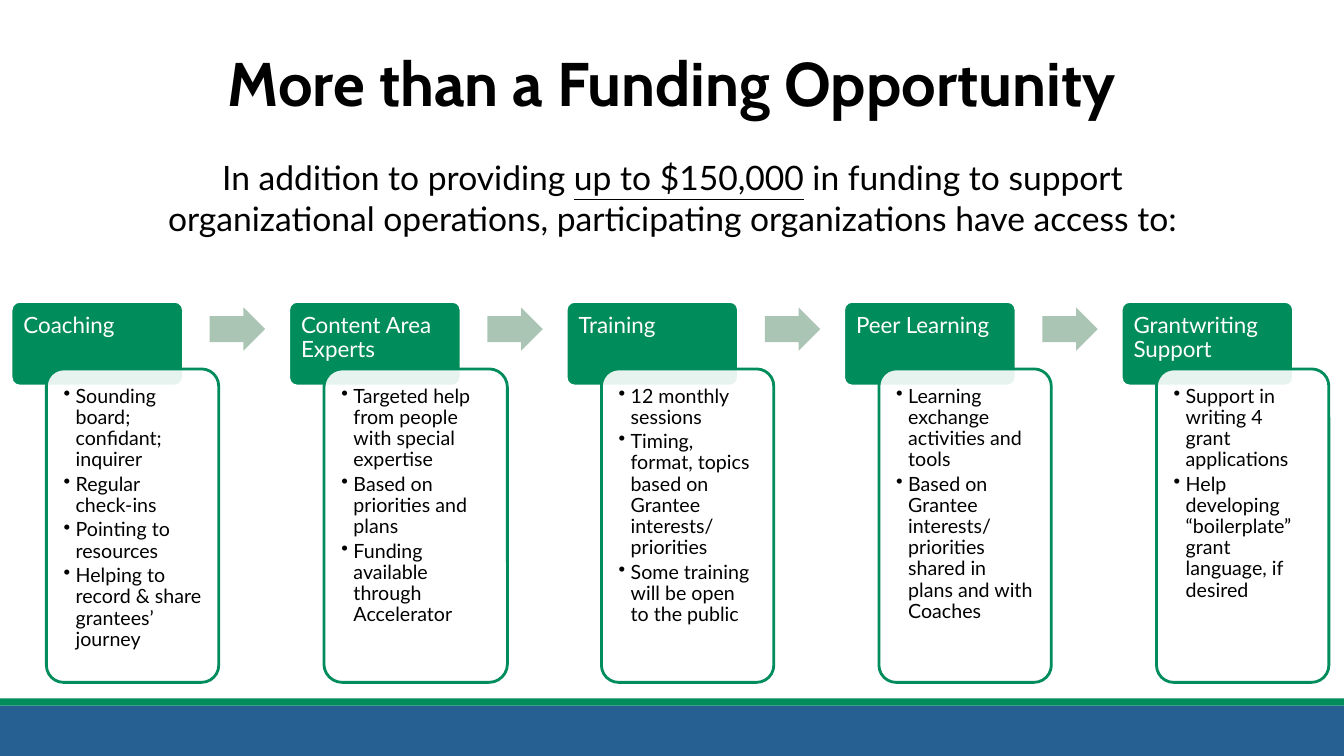
from dataclasses import dataclass

import lxml.etree
import pptx
import pptx.dml.color
import pptx.enum.shapes
import pptx.enum.text
import pptx.oxml.ns
import pptx.shapes.autoshape
import pptx.slide
import pptx.text.text
import pptx.util

Inches = pptx.util.Inches
Pt = pptx.util.Pt
Shapes = pptx.enum.shapes.MSO_SHAPE
Align = pptx.enum.text.PP_ALIGN
Anchor = pptx.enum.text.MSO_ANCHOR

COLORS = {
    "text": "000000",
    "white": "FFFFFF",
    "green": "008C5B",
    "blue": "265F92",
    "arrow": "ABC5B5",
}
HEADING_FONT = "Cabin"
BODY_FONT = "Lato"

SLIDE_WIDTH = 13.33
FIRST_LEFT = 0.11
LAST_LEFT = 11.12
HEADER_TOP = 2.99
HEADER_WIDTH, HEADER_HEIGHT = 1.71, 0.84
CARD_OFFSET, CARD_TOP, CARD_HEIGHT = 0.35, 3.66, 3.11
ARROW_OFFSET, ARROW_TOP = 1.97, 3.05
ARROW_WIDTH, ARROW_HEIGHT = 0.55, 0.43


@dataclass(frozen=True)
class Benefit:
    heading: str
    points: tuple[str, ...]
    card_width: float = 1.71


BENEFITS = (
    Benefit("Coaching", (
        "Sounding board; confidant; inquirer",
        "Regular check-ins",
        "Pointing to resources",
        "Helping to record & share grantees’ journey",
    )),
    Benefit("Content Area Experts", (
        "Targeted help from people with special expertise",
        "Based on priorities and plans",
        "Funding available through Accelerator",
    ), card_width=1.82),
    Benefit("Training", (
        "12 monthly sessions",
        "Timing, format, topics based on Grantee interests/ priorities",
        "Some training will be open to the public",
    )),
    Benefit("Peer Learning", (
        "Learning exchange activities and tools",
        "Based on Grantee interests/ priorities shared in plans and with Coaches",
    )),
    Benefit("Grantwriting Support", (
        "Support in writing 4 grant applications",
        "Help developing “boilerplate” grant language, if desired",
    )),
)


def color(name: str) -> pptx.dml.color.RGBColor:
    return pptx.dml.color.RGBColor.from_string(COLORS[name])


def add_span(para: pptx.text.text._Paragraph, text: str, size: float,
             ink: str = "text", font: str = BODY_FONT,
             bold: bool = False, underline: bool = False) -> None:
    span = para.add_run()
    span.text = text
    span.font.name = font
    span.font.size = Pt(size)
    span.font.bold = bold
    span.font.underline = underline
    span.font.color.rgb = color(ink)


def add_box(page: pptx.slide.Slide, preset: Shapes, left: float, top: float,
            width: float, height: float, fill: str,
            line: str | None = None) -> pptx.shapes.autoshape.Shape:
    box = page.shapes.add_shape(
        preset, Inches(left), Inches(top), Inches(width), Inches(height))
    box.shadow.inherit = False
    box.fill.solid()
    box.fill.fore_color.rgb = color(fill)
    if line:
        box.line.color.rgb = color(line)
        box.line.width = Pt(2)
    else:
        box.line.fill.background()
    return box


def set_text_area(box: pptx.shapes.autoshape.Shape, margin: float,
                  bottom: float) -> pptx.text.text.TextFrame:
    frame = box.text_frame
    frame.word_wrap = True
    frame.vertical_anchor = Anchor.TOP
    frame.margin_left = frame.margin_right = frame.margin_top = Inches(margin)
    frame.margin_bottom = Inches(bottom)
    return frame


def add_bullet(para: pptx.text.text._Paragraph) -> None:
    properties = para._p.get_or_add_pPr()
    properties.set("marL", str(Inches(0.12)))
    properties.set("indent", str(Inches(-0.12)))
    bullet = lxml.etree.SubElement(properties, pptx.oxml.ns.qn("a:buChar"))
    bullet.set("char", "•")


def add_header(page: pptx.slide.Slide, benefit: Benefit, left: float) -> None:
    header = add_box(page, Shapes.ROUNDED_RECTANGLE, left, HEADER_TOP,
                     HEADER_WIDTH, HEADER_HEIGHT, "green", "white")
    header.adjustments[0] = 0.1
    para = set_text_area(header, 0.1, 0.32).paragraphs[0]
    para.alignment = Align.LEFT
    para.line_spacing = 0.9
    add_span(para, benefit.heading, 16, "white")


def add_card(page: pptx.slide.Slide, benefit: Benefit, left: float) -> None:
    card = add_box(page, Shapes.ROUNDED_RECTANGLE, left + CARD_OFFSET, CARD_TOP,
                   benefit.card_width, CARD_HEIGHT, "white", "green")
    card.adjustments[0] = 0.1
    fill = card.fill._xPr.find(pptx.oxml.ns.qn("a:solidFill"))
    alpha = lxml.etree.SubElement(fill[0], pptx.oxml.ns.qn("a:alpha"))
    alpha.set("val", "90000")
    frame = set_text_area(card, 0.12, 0.12)
    for index, point in enumerate(benefit.points):
        para = frame.add_paragraph() if index else frame.paragraphs[0]
        add_bullet(para)
        para.alignment = Align.LEFT
        para.line_spacing = 0.9
        para.space_after = Pt(2.4)
        add_span(para, point, 14)


def add_arrow(page: pptx.slide.Slide, left: float) -> None:
    arrow = add_box(page, Shapes.RIGHT_ARROW, left + ARROW_OFFSET, ARROW_TOP,
                    ARROW_WIDTH, ARROW_HEIGHT, "arrow")
    arrow.adjustments[0] = 0.6
    arrow.adjustments[1] = 0.5


def add_title(page: pptx.slide.Slide) -> None:
    title = page.shapes.title
    title.left, title.top = Inches(0.72), Inches(0.19)
    title.width, title.height = Inches(11.89), Inches(1.25)
    title.text_frame.vertical_anchor = Anchor.MIDDLE
    para = title.text_frame.paragraphs[0]
    para.alignment = Align.CENTER
    add_span(para, "More than a Funding Opportunity", 44,
             font=HEADING_FONT, bold=True)


def add_introduction(page: pptx.slide.Slide) -> None:
    box = page.shapes.add_textbox(
        Inches(1.17), Inches(1.51), Inches(11), Inches(1.25))
    box.text_frame.word_wrap = True
    para = box.text_frame.paragraphs[0]
    para.alignment = Align.CENTER
    add_span(para, "In addition to providing ", 24)
    add_span(para, "up to $150,000", 24, underline=True)
    add_span(para, " in funding to support organizational operations, "
                   "participating organizations have access to:", 24)


def main() -> None:
    deck = pptx.Presentation()
    deck.slide_width, deck.slide_height = Inches(SLIDE_WIDTH), Inches(7.5)
    title_only = deck.slide_layouts.get_by_name("Title Only")
    page = deck.slides.add_slide(title_only)

    add_box(page, Shapes.RECTANGLE, 0, 7, SLIDE_WIDTH, 0.5, "blue")
    add_box(page, Shapes.RECTANGLE, 0, 6.93, SLIDE_WIDTH, 0.07, "green")
    add_title(page)
    add_introduction(page)

    pitch = (LAST_LEFT - FIRST_LEFT) / (len(BENEFITS) - 1)
    for index, benefit in enumerate(BENEFITS):
        left = FIRST_LEFT + index * pitch
        add_header(page, benefit, left)
        add_card(page, benefit, left)
        if benefit is not BENEFITS[-1]:
            add_arrow(page, left)

    deck.save("out.pptx")


if __name__ == "__main__":
    main()
